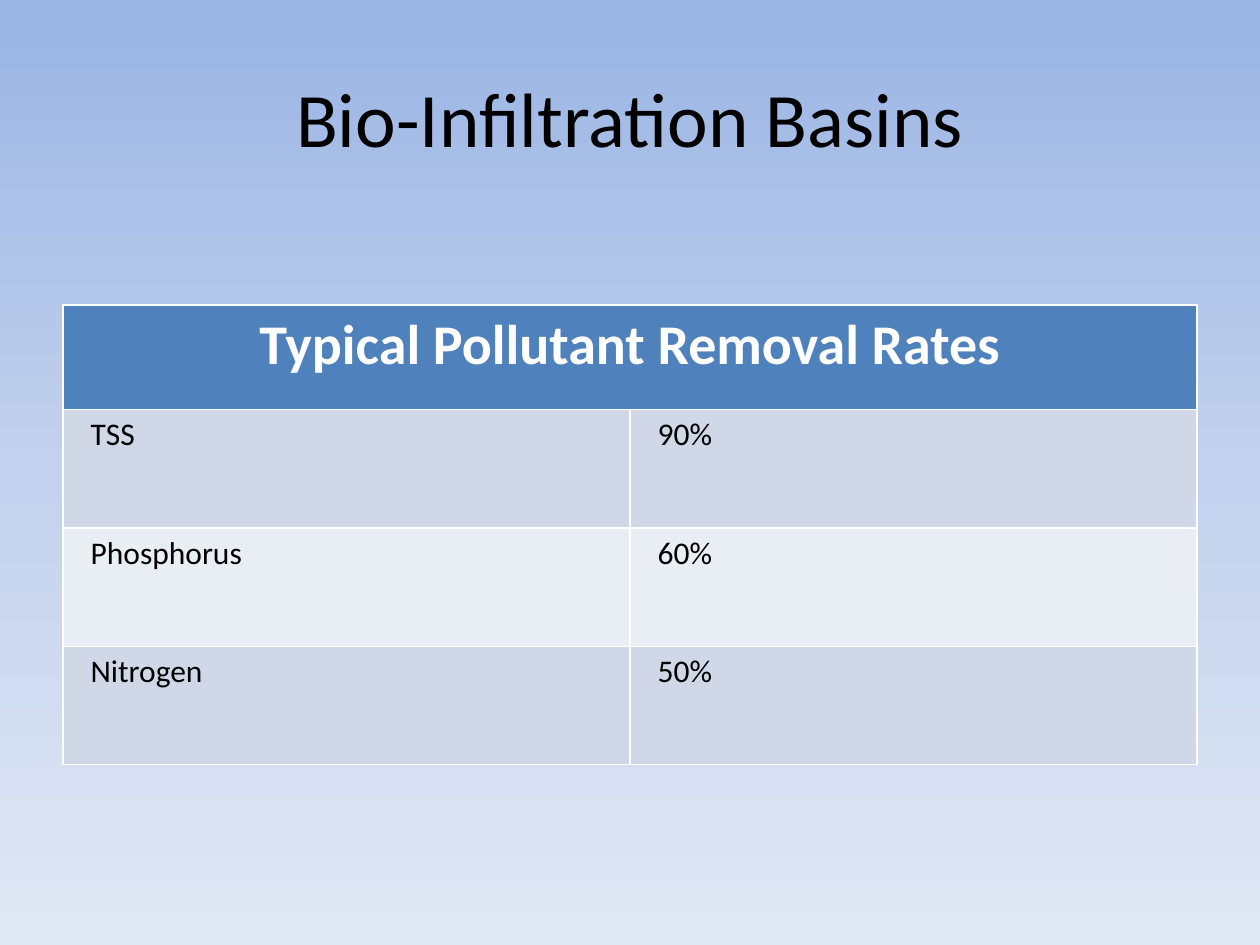
"""Build a slide with a table of pollutant removal rates for bio-infiltration basins."""
from copy import deepcopy

from pptx import Presentation
from pptx.dml.color import RGBColor
from pptx.enum.text import MSO_ANCHOR, PP_ALIGN
from pptx.oxml.ns import qn
from pptx.util import Inches, Pt

CENTER, LEFT = PP_ALIGN.CENTER, PP_ALIGN.LEFT
MIDDLE = MSO_ANCHOR.MIDDLE

TITLE = "Bio-Infiltration Basins"
HEADING = "Typical Pollutant Removal Rates"
RATES = [("TSS", "90%"), ("Phosphorus", "60%"), ("Nitrogen", "50%")]

FONT = "Calibri"
COLORS = {
    "text": "000000",
    "heading_text": "FFFFFF",
    "heading": "4F81BD",
    "odd_row": "D0D8E8",
    "even_row": "E9EDF4",
}
SKY = [(0, "9AB5E4"), (0.5, "C2D1ED"), (1, "E1E8F5")]

WIDTH, HEIGHT = 10, 7.5
MARGIN = WIDTH * 0.05
CONTENT_WIDTH = WIDTH - 2 * MARGIN
TABLE_TOP = 2.42
HEADING_HEIGHT, ROW_HEIGHT = 0.83, 0.94


def paint_background(page):
    fill = page.background.fill
    fill.gradient()
    fill.gradient_angle = 270
    stop_list = page.element.find(".//" + qn("a:gsLst"))
    stop_list.insert(1, deepcopy(stop_list[0]))
    for stop, (position, color) in zip(fill.gradient_stops, SKY):
        stop.position = position
        stop.color.rgb = RGBColor.from_string(color)


def write(frame, text, size, color, align=LEFT, bold=False):
    frame.text = text
    para = frame.paragraphs[0]
    para.alignment = align
    para.font.name = FONT
    para.font.size = Pt(size)
    para.font.bold = bold
    para.font.color.rgb = RGBColor.from_string(COLORS[color])


def fill_cell(cell, color):
    cell.fill.solid()
    cell.fill.fore_color.rgb = RGBColor.from_string(COLORS[color])
    cell.margin_left = cell.margin_right = Inches(0.22)


def add_title(page):
    title = page.shapes.title
    title.left, title.top = Inches(MARGIN), Inches(HEIGHT * 0.04)
    title.width, title.height = Inches(CONTENT_WIDTH), Inches(1.25)
    title.text_frame.vertical_anchor = MIDDLE
    write(title.text_frame, TITLE, 44, "text", CENTER)


def add_rates(page):
    columns = len(RATES[0])
    heights = [HEADING_HEIGHT] + [ROW_HEIGHT] * len(RATES)
    table = page.shapes.add_table(
        len(heights), columns, Inches(MARGIN), Inches(TABLE_TOP),
        Inches(CONTENT_WIDTH), Inches(sum(heights))).table
    for row, height in zip(table.rows, heights):
        row.height = Inches(height)

    heading = table.cell(0, 0)
    heading.merge(table.cell(0, columns - 1))
    fill_cell(heading, "heading")
    write(heading.text_frame, HEADING, 32, "heading_text", CENTER, bold=True)

    for row, values in enumerate(RATES, 1):
        for column, value in enumerate(values):
            cell = table.cell(row, column)
            fill_cell(cell, "odd_row" if row % 2 else "even_row")
            write(cell.text_frame, value, 18, "text")


def main():
    deck = Presentation()
    deck.slide_width, deck.slide_height = Inches(WIDTH), Inches(HEIGHT)
    page = deck.slides.add_slide(deck.slide_layouts.get_by_name("Title Only"))
    paint_background(page)
    add_title(page)
    add_rates(page)
    deck.save("out.pptx")


if __name__ == "__main__":
    main()
